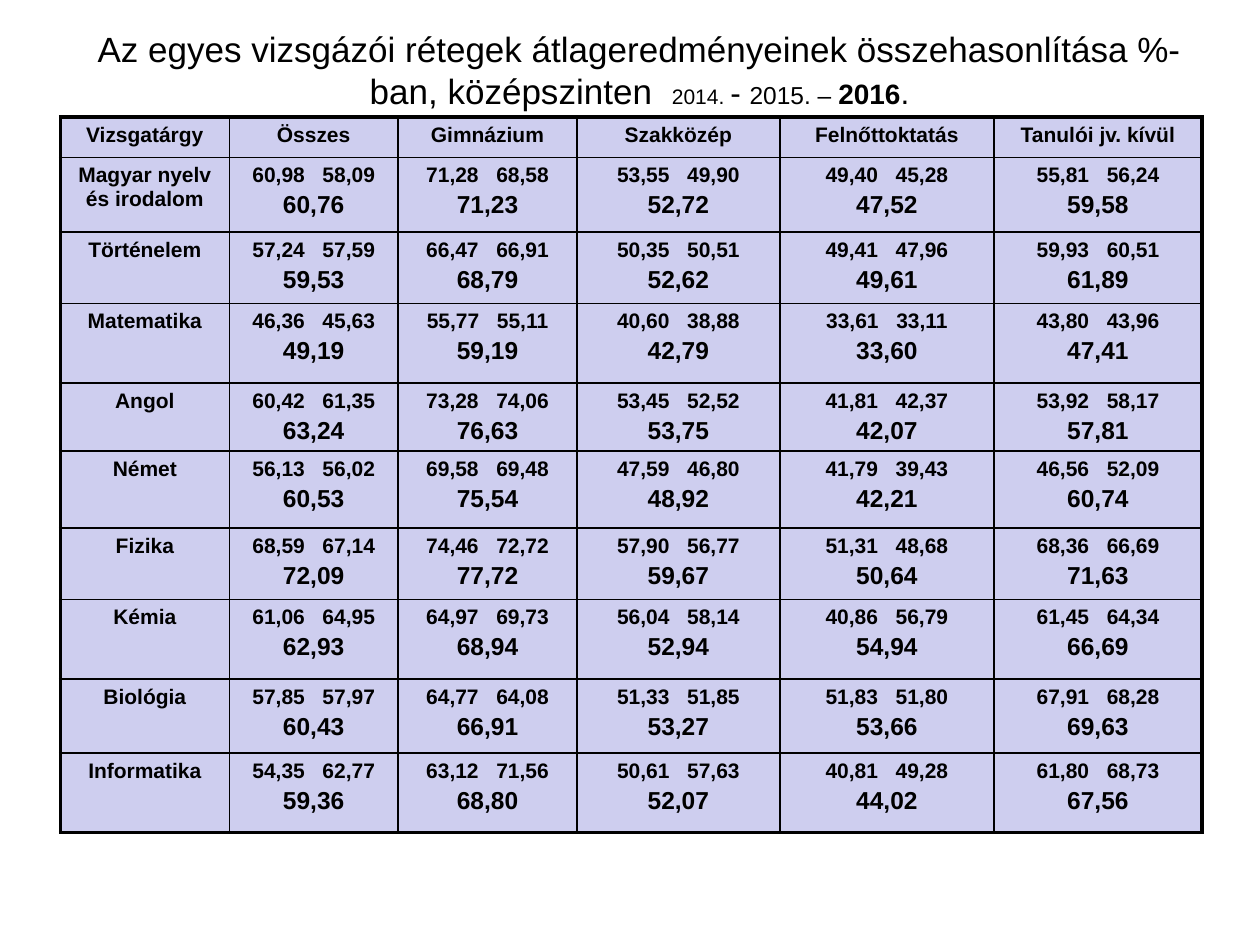
import lxml.etree
import pptx
import pptx.dml.color
import pptx.enum.text
import pptx.oxml.ns
import pptx.util
from pptx.util import Inches, Pt

BLACK = pptx.dml.color.RGBColor(0x00, 0x00, 0x00)
LAVENDER = pptx.dml.color.RGBColor(0xCE, 0xCE, 0xEF)
FONT = "Arial"
THIN, THICK = Pt(1), Pt(2.25)

# Text, size, bold, extra letter spacing in points
TITLE_RUNS = [
    ("Az egyes vizsgázói rétegek átlageredményeinek összehasonlítása %-ban, középszinten",
     20, False, 0),
    (" ", 20, False, 5.6),
    ("2014. ", 12, False, 0),
    ("- ", 18, False, 0),
    ("2015. – ", 14, False, 0),
    ("2016", 16, True, 0),
    (".", 18, False, 0),
]

COLUMN_WIDTHS = [1.34, 1.34, 1.42, 1.61, 1.7, 1.65]
ROW_HEIGHTS = [0.32, 0.59, 0.57, 0.63, 0.54, 0.61, 0.57, 0.63, 0.59, 0.63]
HEADERS = ["Vizsgatárgy", "Összes", "Gimnázium", "Szakközép",
           "Felnőttoktatás", "Tanulói jv. kívül"]

# Each result holds the 2014, 2015 and 2016 averages
RESULTS = {
    "Magyar nyelv és irodalom": ["60,98 58,09 60,76", "71,28 68,58 71,23", "53,55 49,90 52,72",
                                 "49,40 45,28 47,52", "55,81 56,24 59,58"],
    "Történelem": ["57,24 57,59 59,53", "66,47 66,91 68,79", "50,35 50,51 52,62",
                   "49,41 47,96 49,61", "59,93 60,51 61,89"],
    "Matematika": ["46,36 45,63 49,19", "55,77 55,11 59,19", "40,60 38,88 42,79",
                   "33,61 33,11 33,60", "43,80 43,96 47,41"],
    "Angol": ["60,42 61,35 63,24", "73,28 74,06 76,63", "53,45 52,52 53,75",
              "41,81 42,37 42,07", "53,92 58,17 57,81"],
    "Német": ["56,13 56,02 60,53", "69,58 69,48 75,54", "47,59 46,80 48,92",
              "41,79 39,43 42,21", "46,56 52,09 60,74"],
    "Fizika": ["68,59 67,14 72,09", "74,46 72,72 77,72", "57,90 56,77 59,67",
               "51,31 48,68 50,64", "68,36 66,69 71,63"],
    "Kémia": ["61,06 64,95 62,93", "64,97 69,73 68,94", "56,04 58,14 52,94",
              "40,86 56,79 54,94", "61,45 64,34 66,69"],
    "Biológia": ["57,85 57,97 60,43", "64,77 64,08 66,91", "51,33 51,85 53,27",
                 "51,83 51,80 53,66", "67,91 68,28 69,63"],
    "Informatika": ["54,35 62,77 59,36", "63,12 71,56 68,80", "50,61 57,63 52,07",
                    "40,81 49,28 44,02", "61,80 68,73 67,56"],
}


def format_font(font, size, bold):
    font.name = FONT
    font.size = Pt(size)
    font.bold = bold
    font.color.rgb = BLACK


def add_run(paragraph, text, spacing=0):
    run = paragraph.add_run()
    run.text = text
    if spacing:
        run._r.get_or_add_rPr().set("spc", str(round(spacing * 100)))
    return run


def add_title(slide):
    title = slide.shapes.title
    title.left, title.top = Inches(0.43), Inches(0.05)
    title.width, title.height = Inches(9.29), Inches(1.01)
    frame = title.text_frame
    frame.word_wrap = True
    frame.auto_size = pptx.enum.text.MSO_AUTO_SIZE.NONE
    frame.vertical_anchor = pptx.enum.text.MSO_ANCHOR.MIDDLE
    paragraph = frame.paragraphs[0]
    paragraph.alignment = pptx.enum.text.PP_ALIGN.CENTER
    for text, size, bold, spacing in TITLE_RUNS:
        format_font(add_run(paragraph, text, spacing).font, size, bold)


def format_paragraph(paragraph, size):
    paragraph.alignment = pptx.enum.text.PP_ALIGN.CENTER
    format_font(paragraph.font, size, True)


def write_label(cell, text):
    paragraph = cell.text_frame.paragraphs[0]
    format_paragraph(paragraph, 12)
    add_run(paragraph, text)


def write_result(cell, result):
    first, second, latest = result.split()
    earlier = cell.text_frame.paragraphs[0]
    format_paragraph(earlier, 12)
    add_run(earlier, first)
    add_run(earlier, " ", spacing=6.7)  # one widened space parts the years
    add_run(earlier, second)
    current = cell.text_frame.add_paragraph()
    format_paragraph(current, 14)
    current.space_before = Pt(2.4)
    add_run(current, latest)


def set_borders(cell, widths):
    properties = cell._tc.get_or_add_tcPr()
    for index, (side, width) in enumerate(widths.items()):
        line = lxml.etree.Element(pptx.oxml.ns.qn(f"a:ln{side}"), w=str(width))
        fill = lxml.etree.SubElement(line, pptx.oxml.ns.qn("a:solidFill"))
        lxml.etree.SubElement(fill, pptx.oxml.ns.qn("a:srgbClr"), val=str(BLACK))
        properties.insert(index, line)


def add_results_table(slide):
    row_count, column_count = len(ROW_HEIGHTS), len(COLUMN_WIDTHS)
    table = slide.shapes.add_table(
        row_count, column_count, Inches(0.48), Inches(0.93),
        Inches(sum(COLUMN_WIDTHS)), Inches(sum(ROW_HEIGHTS))).table
    table.first_row = table.horz_banding = False
    for column, width in zip(table.columns, COLUMN_WIDTHS):
        column.width = Inches(width)
    for row, height in zip(table.rows, ROW_HEIGHTS):
        row.height = Inches(height)

    # Header row, then one row per subject
    rows = [HEADERS] + [[subject, *results] for subject, results in RESULTS.items()]
    for row_index, values in enumerate(rows):
        for column_index, value in enumerate(values):
            cell = table.cell(row_index, column_index)
            write = write_result if row_index and column_index else write_label
            write(cell, value)
            cell.fill.solid()
            cell.fill.fore_color.rgb = LAVENDER
            set_borders(cell, {
                "L": THICK if column_index == 0 else THIN,
                "R": THICK if column_index == column_count - 1 else THIN,
                "T": THICK if row_index == 0 else THIN,
                "B": THICK if row_index == row_count - 1 else THIN,
            })


def main():
    presentation = pptx.Presentation()
    presentation.slide_width, presentation.slide_height = Inches(10), Inches(7.5)
    slide = presentation.slides.add_slide(presentation.slide_layouts[5])
    add_title(slide)
    add_results_table(slide)
    presentation.save("out.pptx")


if __name__ == "__main__":
    main()
